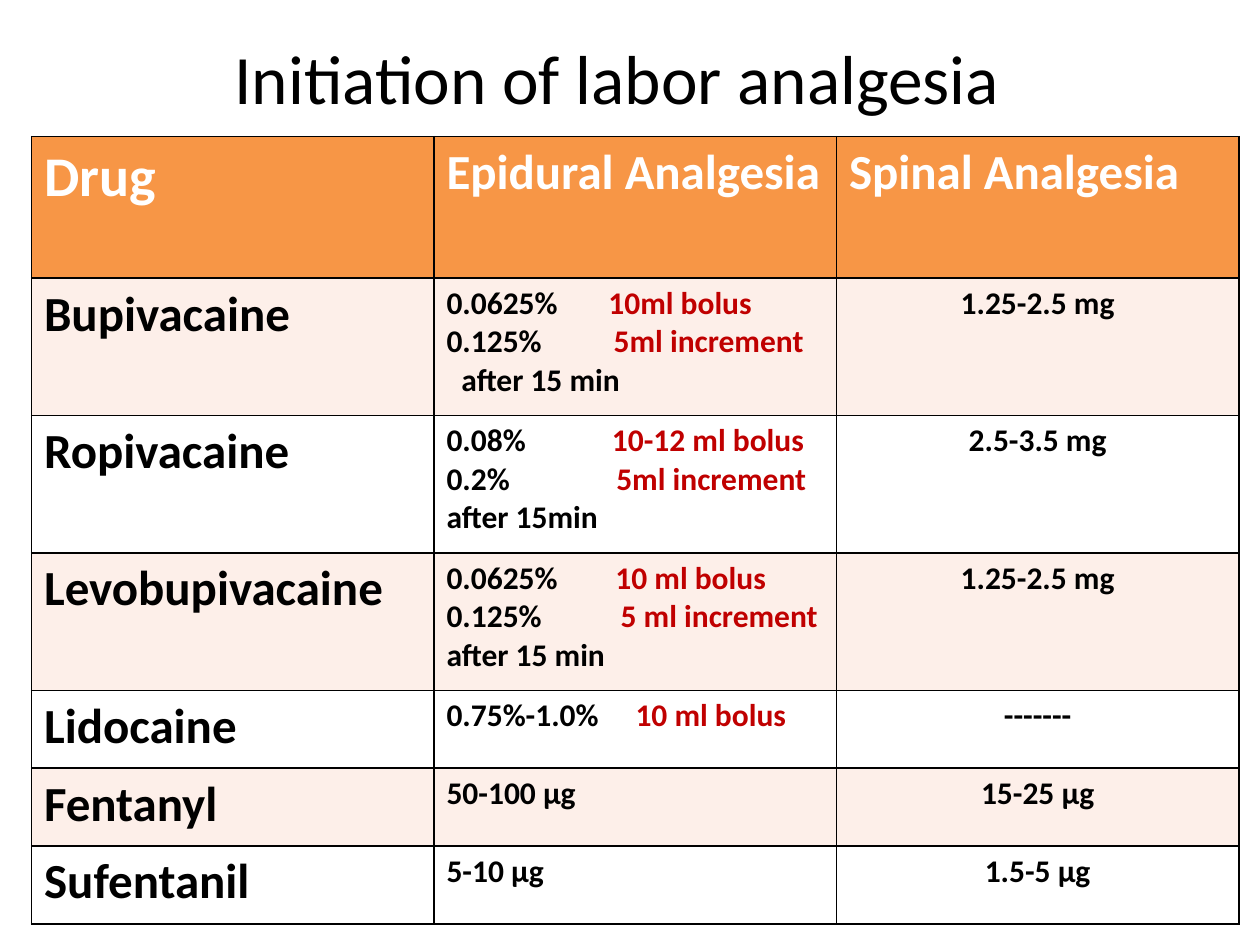
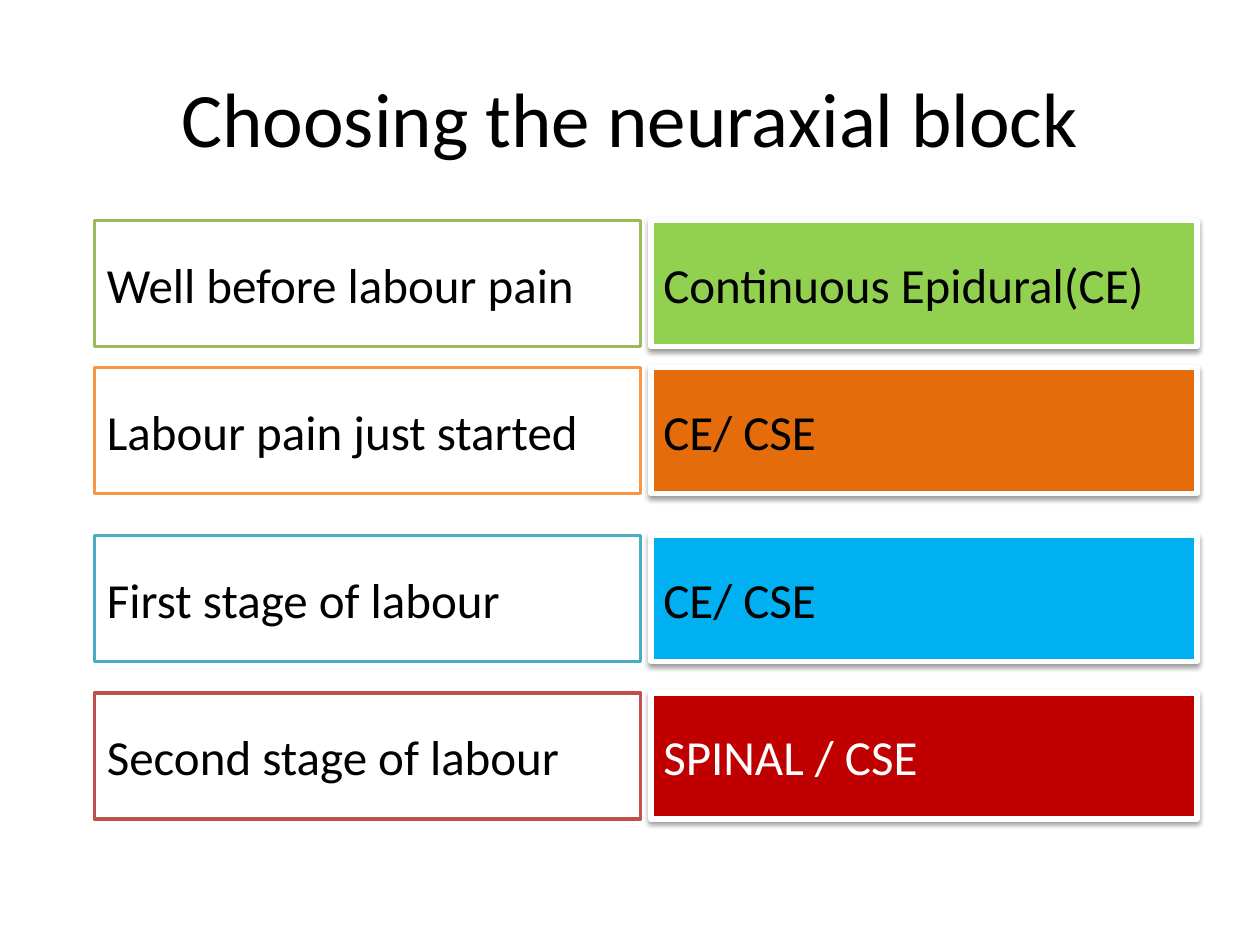
from dataclasses import dataclass

from lxml import etree
from pptx import Presentation
from pptx.dml.color import RGBColor
from pptx.enum.shapes import MSO_SHAPE
from pptx.enum.text import MSO_ANCHOR, MSO_AUTO_SIZE, PP_ALIGN
from pptx.oxml.ns import qn
from pptx.util import Pt

RECT = MSO_SHAPE.RECTANGLE
MIDDLE = MSO_ANCHOR.MIDDLE
NO_FIT = MSO_AUTO_SIZE.NONE
LEFT, CENTER = PP_ALIGN.LEFT, PP_ALIGN.CENTER

# Shared look
FONT = "Calibri"
TITLE_ONLY = 5
BLACK = RGBColor(0x00, 0x00, 0x00)
WHITE = RGBColor(0xFF, 0xFF, 0xFF)
ORANGE = RGBColor(0xF7, 0x96, 0x46)
PEACH = RGBColor(0xFD, 0xEF, 0xE9)
RED = RGBColor(0xC0, 0x00, 0x00)
OLIVE = RGBColor(0x9B, 0xBB, 0x59)
TEAL = RGBColor(0x4B, 0xAC, 0xC6)
BRICK = RGBColor(0xC0, 0x50, 0x4D)
LIME = RGBColor(0x92, 0xD0, 0x50)
RUST = RGBColor(0xE4, 0x6C, 0x0A)
SKY = RGBColor(0x00, 0xB0, 0xF0)


@dataclass
class Line:
    """One paragraph: strength, red dose at a tab stop, and a tail."""
    text: str
    dose: str = ""
    tail: str = ""
    stop: float = 0
    inset: float = 0  # puts the tail on its own line, this far in


@dataclass
class Drug:
    name: str
    lines: list[Line]
    spinal: str
    height: float


@dataclass
class Choice:
    top: float
    stage: str
    edge: RGBColor
    block: str
    fill: RGBColor
    ink: RGBColor = BLACK


TALL, LOW, HEAD = 78.5, 44.5, 81
DRUGS = [
    Drug("Bupivacaine",
         [Line("0.0625%", "10ml bolus", stop=92.5),
          Line("0.125%", "5ml increment", "after 15 min", 95.5, 8.5)],
         "1.25-2.5 mg", TALL),
    Drug("Ropivacaine",
         [Line("0.08%", "10-12 ml bolus", stop=94.5),
          Line("0.2%", "5ml increment ", "after 15min", 97)],
         "2.5-3.5 mg", TALL),
    Drug("Levobupivacaine",
         [Line("0.0625%", "10 ml bolus", stop=96.5),
          Line("0.125%", "5 ml increment ", "after 15 min", 99.5)],
         "1.25-2.5 mg", TALL),
    Drug("Lidocaine", [Line("0.75%-1.0%", "10 ml bolus", stop=108)],
         "-------", LOW),
    Drug("Fentanyl", [Line("50-100 μg")], "15-25 μg", LOW),
    Drug("Sufentanil", [Line("5-10 μg")], "1.5-5 μg", LOW),
]
HEADS = [("Drug", 32), ("Epidural Analgesia", 28), ("Spinal Analgesia", 28)]

CHOICES = [
    Choice(126, "Well before labour pain", OLIVE,
           "Continuous Epidural(CE)", LIME),
    Choice(210, "Labour pain just started", ORANGE, "CE/ CSE", RUST),
    Choice(306, "First stage of labour", TEAL, "CE/ CSE", SKY),
    Choice(396, "Second stage of labour", BRICK, "SPINAL / CSE", RED, WHITE),
]


def style(run, size: float, ink: RGBColor, bold: bool = False) -> None:
    font = run.font
    font.name, font.size, font.bold = FONT, Pt(size), bold
    font.color.rgb = ink


def add_page(deck, title: str, size: float, box: tuple):
    """Add a slide with its title placed and styled."""
    page = deck.slides.add_slide(deck.slide_layouts[TITLE_ONLY])
    head = page.shapes.title
    head.left, head.top, head.width, head.height = map(Pt, box)
    frame = head.text_frame
    frame.text = title
    frame.auto_size, frame.vertical_anchor = NO_FIT, MIDDLE
    para = frame.paragraphs[0]
    para.alignment = CENTER
    style(para.runs[0], size, BLACK)
    return page


# Table parts
def dress(cell, fill: RGBColor) -> None:
    """Fill a cell and give it thin black borders."""
    cell.fill.solid()
    cell.fill.fore_color.rgb = fill
    props = cell._tc.get_or_add_tcPr()
    for spot, side in enumerate(("lnL", "lnR", "lnT", "lnB")):
        edge = etree.Element(qn(f"a:{side}"), w=str(Pt(1)))
        paint = etree.SubElement(edge, qn("a:solidFill"))
        etree.SubElement(paint, qn("a:srgbClr"), val=str(BLACK))
        props.insert(spot, edge)


def write(cell, text: str, size: float, ink: RGBColor, align=LEFT) -> None:
    cell.text_frame.text = text
    para = cell.text_frame.paragraphs[0]
    para.alignment = align
    style(para.runs[0], size, ink, True)


def set_tabs(para, stops: list[float]) -> None:
    tabs = etree.SubElement(para._p.get_or_add_pPr(), qn("a:tabLst"))
    for stop in stops:
        etree.SubElement(tabs, qn("a:tab"), pos=str(Pt(stop)), algn="l")


def add_dose(para, line: Line) -> None:
    para.text = line.text
    style(para.runs[0], 18, BLACK, True)
    if line.dose:
        set_tabs(para, [stop for stop in (line.inset, line.stop) if stop])
        run = para.add_run()
        run.text = "\t" + line.dose
        style(run, 18, RED, True)
    if line.tail:
        if line.inset:
            para.add_line_break()
        run = para.add_run()
        run.text = ("\t" if line.inset else "") + line.tail
        style(run, 18, BLACK, True)


def add_drugs(page) -> None:
    total = HEAD + sum(drug.height for drug in DRUGS)
    grid = page.shapes.add_table(len(DRUGS) + 1, len(HEADS), Pt(18), Pt(78),
                                 Pt(690), Pt(total)).table
    for col, (text, size) in enumerate(HEADS):
        grid.columns[col].width = Pt(230)
        write(grid.cell(0, col), text, size, WHITE)
        dress(grid.cell(0, col), ORANGE)
    grid.rows[0].height = Pt(HEAD)

    for row, drug in enumerate(DRUGS, 1):
        grid.rows[row].height = Pt(drug.height)
        name, epi, spinal = grid.rows[row].cells
        write(name, drug.name, 28, BLACK)
        write(spinal, drug.spinal, 18, BLACK, CENTER)
        frame = epi.text_frame
        for spot, line in enumerate(drug.lines):
            para = frame.add_paragraph() if spot else frame.paragraphs[0]
            add_dose(para, line)
        for cell in (name, epi, spinal):
            dress(cell, PEACH if row % 2 else WHITE)


# Boxes
def add_box(page, left: float, top: float, text: str, fill: RGBColor,
            edge: RGBColor, width: float, ink: RGBColor = BLACK):
    box = page.shapes.add_shape(RECT, Pt(left), Pt(top), Pt(312), Pt(72))
    box.shadow.inherit = False
    box.fill.solid()
    box.fill.fore_color.rgb = fill
    box.line.color.rgb, box.line.width = edge, Pt(width)
    frame = box.text_frame
    frame.text = text
    frame.word_wrap, frame.vertical_anchor = True, MIDDLE
    frame.paragraphs[0].alignment = LEFT
    style(frame.paragraphs[0].runs[0], 28, ink)
    return box


def add_shade(box) -> None:
    """Give a box a soft shadow below."""
    list_ = box._element.spPr.find(qn("a:effectLst"))
    shade = etree.SubElement(list_, qn("a:outerShdw"), blurRad=str(Pt(3.1)),
                             dist=str(Pt(1.6)), dir="5400000",
                             rotWithShape="0")
    tint = etree.SubElement(shade, qn("a:srgbClr"), val=str(BLACK))
    etree.SubElement(tint, qn("a:alpha"), val="38000")


def main() -> None:
    deck = Presentation()
    deck.slide_width, deck.slide_height = Pt(720), Pt(540)

    # Drug doses
    page = add_page(deck, "Initiation of labor analgesia ", 39.6,
                    (108, 18, 498, 52))
    add_drugs(page)

    # Block for each stage
    page = add_page(deck, "Choosing the neuraxial block", 44,
                    (36, 21.6, 648, 90))
    for pick in CHOICES:
        add_box(page, 54, pick.top, pick.stage, WHITE, pick.edge, 2)
        add_shade(add_box(page, 372, pick.top, pick.block, pick.fill,
                          WHITE, 3, pick.ink))

    deck.save("out.pptx")


if __name__ == "__main__":
    main()
